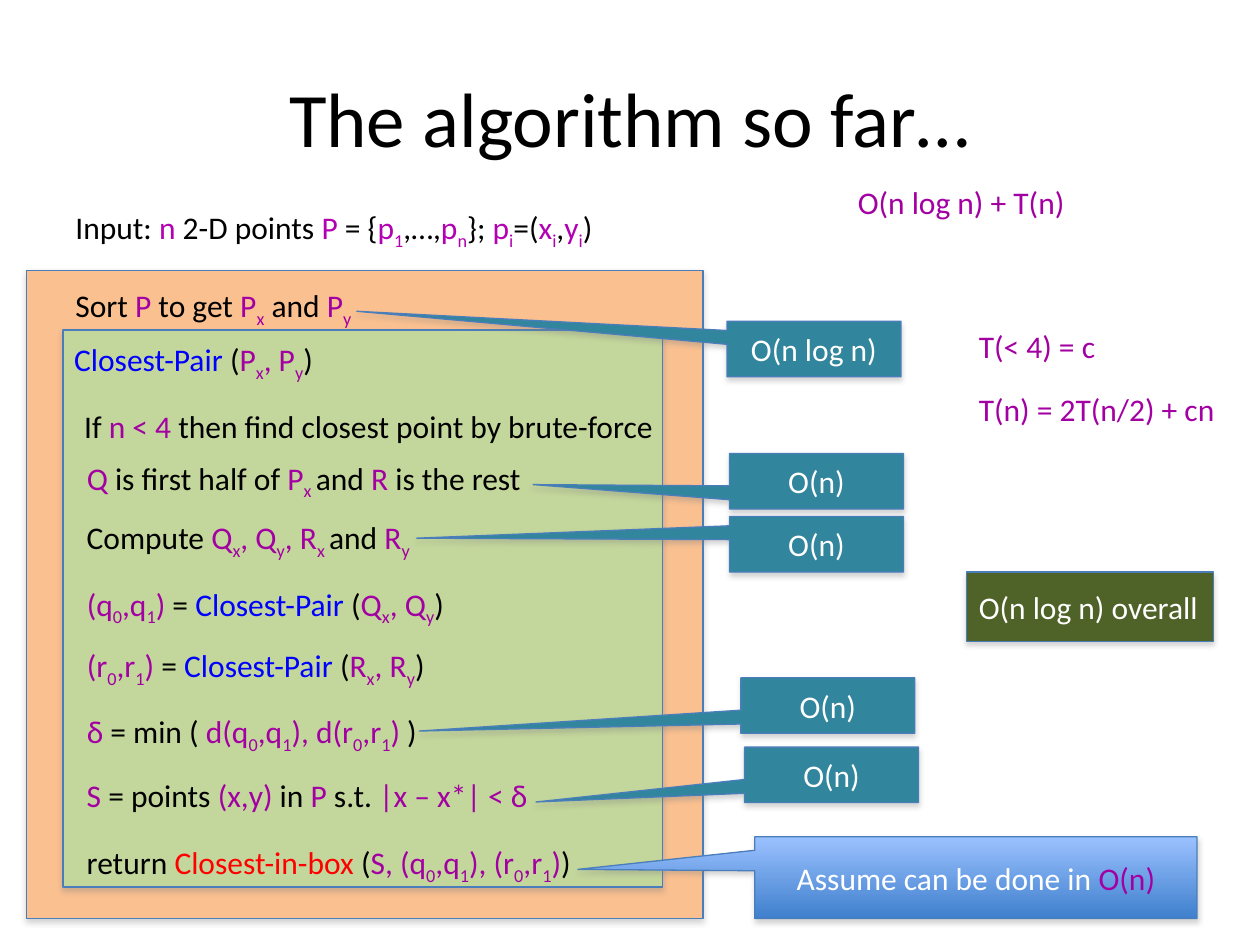
"""Build the slide that tallies the running time of the closest-pair algorithm."""
from lxml import etree
from pptx import Presentation
from pptx.dml.color import RGBColor
from pptx.enum.shapes import MSO_SHAPE
from pptx.enum.text import MSO_ANCHOR, MSO_AUTO_SIZE, PP_ALIGN
from pptx.oxml.ns import qn
from pptx.util import Inches, Pt

RECTANGLE, CALLOUT = MSO_SHAPE.RECTANGLE, MSO_SHAPE.RECTANGULAR_CALLOUT
LEFT, CENTER = PP_ALIGN.LEFT, PP_ALIGN.CENTER
MIDDLE = MSO_ANCHOR.MIDDLE
FIT_SHAPE = MSO_AUTO_SIZE.SHAPE_TO_FIT_TEXT

THEME = {
    "font": "Calibri", "title": 44, "body": 18, "line_width": 0.75,
    "line": "4A7EBB", "shadow": "808080",
    "outer": "FAC090", "inner": "C3D69B", "cost": "31859C", "total": "4F6228",
    "gradient": ("9BC1FF", "3F80CD"),
    "ink": {"k": "000000", "m": "B200B2", "v": "A300A3", "b": "0000FF",
            "r": "FF0000", "w": "FFFFFF"},
}

deck = Presentation()
deck.slide_width, deck.slide_height = Inches(10), Inches(7.5)
page = deck.slides.add_slide(deck.slide_layouts[6])
COLUMN, ROW = deck.slide_width / 100, deck.slide_height / 75


def write(frame, markup, align=LEFT, size=THEME["body"]):
    """Add runs: [x] picks an ink, and _ lowers the next character."""
    para = frame.paragraphs[0]
    para.alignment = align
    for chunk in markup.split("[")[1:]:
        ink, words = chunk.split("]", 1)
        plain, *lowered = words.split("_")
        pieces = [(plain, False)]
        for part in lowered:
            cut = 2 if part[1:2] == " " else 1
            pieces += [(part[:cut], True), (part[cut:], False)]
        for text, is_subscript in pieces:
            if text:
                span = para.add_run()
                span.text = text
                span.font.name = THEME["font"]
                span.font.size = Pt(size)
                span.font.color.rgb = RGBColor.from_string(THEME["ink"][ink])
                if is_subscript:
                    span.font._element.set("baseline", "-25000")


def add_box(kind, column, row, columns, rows, fill):
    """Add an outlined shape with a soft shadow below it."""
    box = page.shapes.add_shape(kind, int(column * COLUMN), int(row * ROW),
                                int(columns * COLUMN), int(rows * ROW))
    if isinstance(fill, tuple):
        box.fill.gradient()
        box.fill.gradient_angle = 270
        for stop, color in zip(box.fill.gradient_stops, fill):
            stop.color.rgb = RGBColor.from_string(color)
        for stop, position in zip(box.fill.gradient_stops, (0, 1)):
            stop.position = position
    else:
        box.fill.solid()
        box.fill.fore_color.rgb = RGBColor.from_string(fill)
    box.line.color.rgb = RGBColor.from_string(THEME["line"])
    box.line.width = Pt(THEME["line_width"])
    box.shadow.inherit = False
    effects = box._element.spPr.find(qn("a:effectLst"))
    shadow = etree.SubElement(effects, qn("a:outerShdw"), blurRad=str(Pt(3.1)),
                              dist=str(Pt(1.8)), dir="5400000", rotWithShape="0")
    color = etree.SubElement(shadow, qn("a:srgbClr"), val=THEME["shadow"])
    etree.SubElement(color, qn("a:alpha"), val="35000")
    box.text_frame.vertical_anchor = MIDDLE
    box.text_frame.word_wrap = True
    return box


add_box(RECTANGLE, 2.1, 21.5, 53.7, 51.4, THEME["outer"])
add_box(RECTANGLE, 5, 26.2, 47.6, 44.2, THEME["inner"])

title = page.shapes.add_textbox(int(5 * COLUMN), int(3 * ROW),
                                int(90 * COLUMN), int(12.5 * ROW))
title.text_frame.word_wrap = True
title.text_frame.vertical_anchor = MIDDLE
write(title.text_frame, "[k]The algorithm so far…", CENTER, THEME["title"])

lines = [
    (5, 16, 44.1, "[k]Input: [m]n[k] 2-D points [m]P[k] = {[m]p_1[k],…,[m]p_n[k]}; "
                  "[m]p_i[k]=([m]x_i[k],[m]y_i[k])"),
    (5, 22.2, 25.1, "[k]Sort [v]P[k] to get [v]P_x[k] and [v]P_y"),
    (4.9, 26.5, 22.1, "[b]Closest-Pair [k]([v]P_x, P_y[k])"),
    (5.7, 31.8, 47.6, "[k]If [v]n < 4 [k]then find closest point by brute-force"),
    (5.9, 35.9, 37.8, "[v]Q[k] is first half of[v] P_x [k]and [v]R[k] is the rest"),
    (5.9, 40.6, 28.7, "[k]Compute [v]Q_x, Q_y, R_x [k]and [v]R_y"),
    (5.9, 45.9, 31.8, "[v](q_0,q_1) [k]= [b]Closest-Pair [k]([v]Q_x, Q_y[k])"),
    (5.9, 50.8, 29.8, "[v](r_0,r_1) [k]= [b]Closest-Pair [k]([v]R_x, R_y[k])"),
    (5.9, 56, 28.9, "[v]δ[k] = min ( [v]d(q_0,q_1), d(r_0,r_1) [k])"),
    (5.9, 61.1, 37.4, "[v]S[k] = points [v](x,y)[k] in [v]P[k] s.t. [v]|x – x*| < δ"),
    (5.9, 66.4, 41.7, "[k]return [r]Closest-in-box [k]([v]S, (q_0,q_1), (r_0,r_1)[k])"),
    (67.1, 14, 18.6, "[v]O(n log n) + T(n)"),
    (76.7, 25.5, 11.4, "[v]T(< 4) = c"),
    (76.7, 30.5, 20.9, "[v]T(n) = 2T(n/2) + cn"),
]
for column, row, columns, markup in lines:
    line = page.shapes.add_textbox(int(column * COLUMN), int(row * ROW),
                                   int(columns * COLUMN), int(4 * ROW))
    line.text_frame.word_wrap = False
    line.text_frame.auto_size = FIT_SHAPE
    write(line.text_frame, markup)

cost_size = (13.8, 4.4)
callouts = [
    (59.9, 66.4, (35.1, 6.5), THEME["gradient"], (-0.9, -0.1),
     "[w]Assume can be done in [v]O(n)"),
    (57.7, 25.5, cost_size, THEME["cost"], (-2.63, -0.68), "[w]O(n log n)"),
    (57.9, 36, cost_size, THEME["cost"], (-1.63, 0.06), "[w]O(n)"),
    (57.9, 41, cost_size, THEME["cost"], (-2.3, -0.11), "[w]O(n)"),
    (58.8, 53.8, cost_size, THEME["cost"], (-2.35, 0.46), "[w]O(n)"),
    (59.1, 59.3, cost_size, THEME["cost"], (-1.7, 0.49), "[w]O(n)"),
]
for column, row, size, fill, tip, markup in callouts:
    callout = add_box(CALLOUT, column, row, *size, fill)
    callout.adjustments[0], callout.adjustments[1] = tip
    write(callout.text_frame, markup, CENTER)

total = add_box(RECTANGLE, 76.7, 45.4, 19.6, 5.5, THEME["total"])
total.text_frame.word_wrap = False
write(total.text_frame, "[w]O(n log n) overall")

deck.save("out.pptx")
